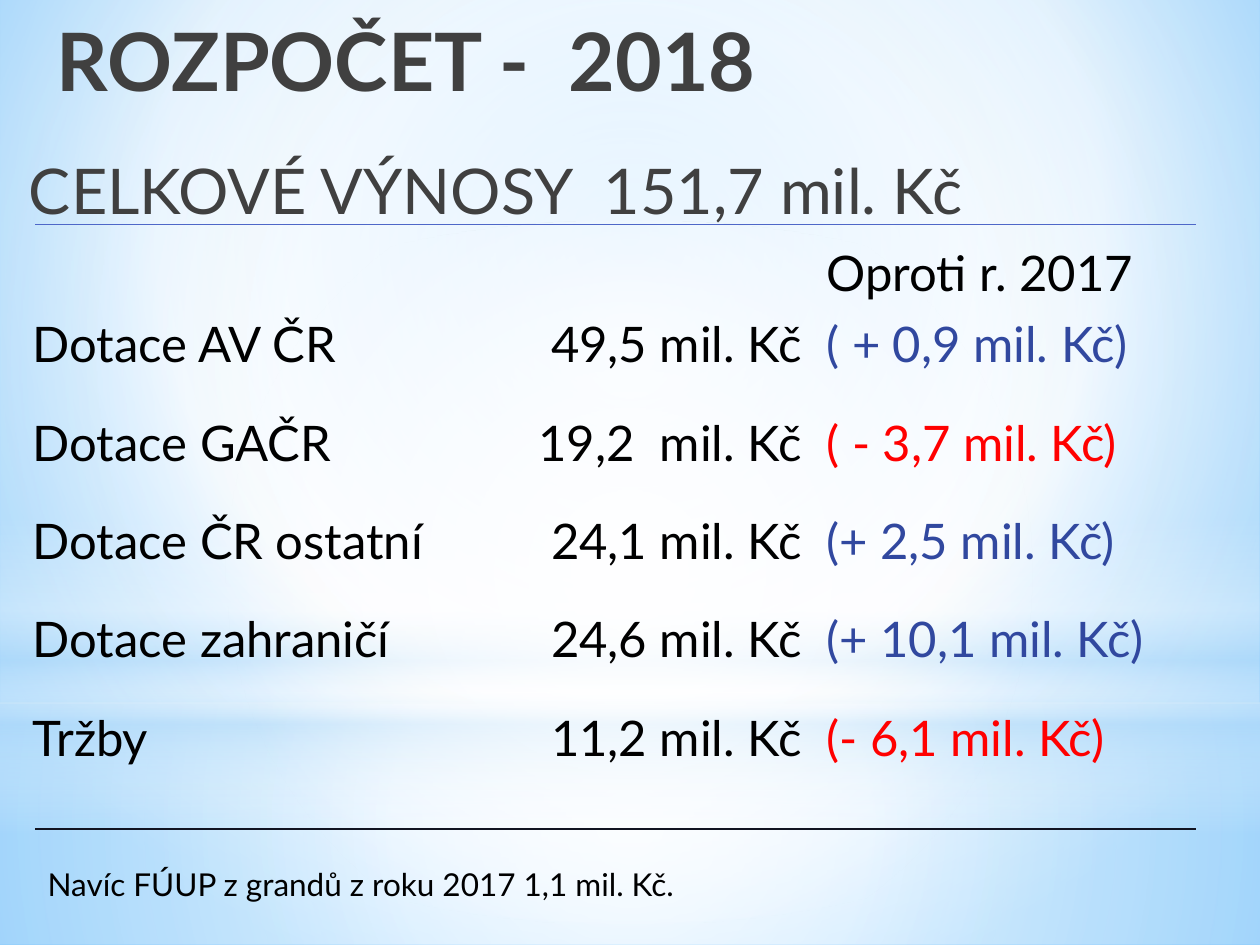
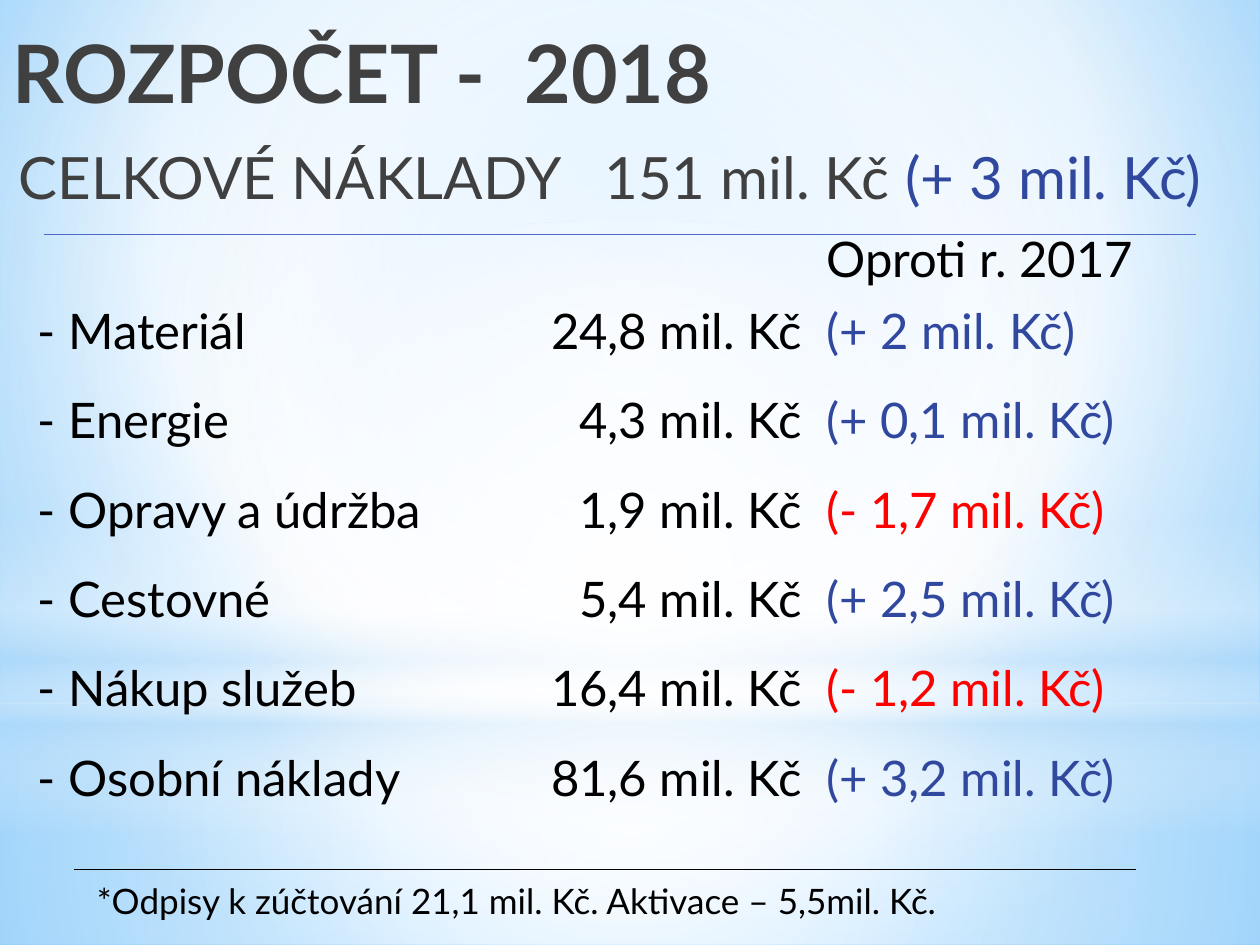
import pptx
import pptx.dml.color
import pptx.enum.shapes
import pptx.enum.text
import pptx.oxml
import pptx.oxml.ns
import pptx.util

SHAPE = pptx.enum.shapes.MSO_SHAPE
ALIGN = pptx.enum.text.PP_ALIGN
FIT = pptx.enum.text.MSO_AUTO_SIZE
WIDTH, HEIGHT, HORIZON = 10, 7.5, 5.58

# Content; lengths in inches
HEADING = "ROZPOČET -  2018"
COMPARISON = "Oproti r. 2017"

BUDGETS = [
    {
        "total": [("CELKOVÉ VÝNOSY  151,7 mil. Kč", "soft")],
        "items": [
            ("Dotace AV ČR", "49,5 mil. Kč", "( + 0,9 mil. Kč)"),
            ("Dotace GAČR", "19,2  mil. Kč", "( - 3,7 mil. Kč)"),
            ("Dotace ČR ostatní", "24,1 mil. Kč", "(+ 2,5 mil. Kč)"),
            ("Dotace zahraničí", "24,6 mil. Kč", "(+ 10,1 mil. Kč)"),
            ("Tržby", "11,2 mil. Kč", "(- 6,1 mil. Kč)"),
        ],
        "note": "Navíc FÚUP z grandů z roku 2017 1,1 mil. Kč.",
        "heading_at": (0.35, 0.04, 9.65, 1.25),
        "total_at": (0.08, 1.15, 9.92, 0.79),
        "table_at": (0.16, 1.88),
        "note_at": (0.28, 6.82, 7.48, 0.4),
        "columns": (3.35, 2.95, 3.15),
        "rows": [0.54] + [0.78] * 5,
        "rules": [(0.28, 9.49, 1.78, "rule"), (0.28, 9.49, 6.58, "dark_rule")],
        "total_size": 36, "note_size": 18,
    },
    {
        "total": [("CELKOVÉ NÁKLADY   151 mil. Kč ", "soft"),
                  ("(+ 3 mil. Kč)", "rise")],
        "items": [
            ("- Materiál", "24,8 mil. Kč", "(+ 2 mil. Kč)"),
            ("- Energie", "4,3 mil. Kč", "(+ 0,1 mil. Kč)"),
            ("- Opravy a údržba", "1,9 mil. Kč", "(- 1,7 mil. Kč)"),
            ("- Cestovné", "5,4 mil. Kč", "(+ 2,5 mil. Kč)"),
            ("- Nákup služeb", "16,4 mil. Kč", "(- 1,2 mil. Kč)"),
            ("- Osobní náklady", "81,6 mil. Kč", "(+ 3,2 mil. Kč)"),
        ],
        "note": "*Odpisy k zúčtování 21,1 mil. Kč. Aktivace – 5,5mil. Kč.",
        "heading_at": (0, 0.13, 10, 1.02),
        "total_at": (0, 1.07, 9.8, 0.79),
        "table_at": (0.2, 1.77),
        "note_at": (0.67, 6.93, 8.11, 0.44),
        "columns": (3.35, 2.91, 3.19),
        "rows": [0.53] + [0.71] * 5 + [0.97],
        "rules": [(0.35, 9.49, 1.86, "rule"), (0.59, 9.02, 6.9, "ink")],
        "total_size": 33.3, "note_size": 20,
    },
]

# Theme: colours, type sizes, gradients of (position, colour, opacity)
THEME = {
    "font": "Lato",
    "heading_size": 46, "table_size": 28, "rule_width": 0.75,
    "ink": "000000", "soft": "404040", "rise": "31489F", "fall": "FF0000",
    "rule": "4E67C8", "dark_rule": "111422",
    "no_grid": "{2D5ABB26-0587-4C30-8999-92F81FD0307C}",
}
CENTRE = (50, 50, 50, 50)
HEADING_STOPS = [(0, "000000", 100), (40, "404040", 100), (100, "212745", 65)]
SKY_STOPS = [(0, "9ED5FF", 100), (60, "FFFFFF", 100), (100, "5BB9FF", 100)]
BACKDROP = [
    (SHAPE.RECTANGLE, (0, HORIZON, WIDTH, HEIGHT - HORIZON), CENTRE,
     [(0, "FFFFFF", 91), (37, "FFFFFF", 76), (100, "B4DCFA", 79)]),
    (SHAPE.RECTANGLE, (0, 0, WIDTH, HORIZON), CENTRE,
     [(0, "FFFFFF", 89), (48, "FFFFFF", 62), (100, "B4DCFA", 79)]),
    (SHAPE.RECTANGLE, (0, 4.12, WIDTH, 2.5), None,
     [(0, "FFFFFF", 0), (29, "FFFFFF", 30), (45, "B4DCFA", 40),
      (55, "FFFFFF", 26), (65, "B4DCFA", 60), (100, "FFFFFF", 0)]),
    (SHAPE.OVAL, (0, 1.75, WIDTH, HORIZON), CENTRE,
     [(0, "FFFFFF", 100), (56, "FFFFFF", 0)]),
]


def inches(lengths):
    return [pptx.util.Inches(length) for length in lengths]


def rgb(name):
    return pptx.dml.color.RGBColor.from_string(THEME[name])


def set_all(target, values):
    for attribute, value in values.items():
        setattr(target, attribute, value)


def put_gradient(fill, owner, stops, focus=None):
    """Fill owner with a circular gradient around focus, or a vertical one."""
    fill.solid()
    fill.fore_color.rgb = rgb("ink")
    colours = "".join(
        f'<a:gs pos="{place * 1000}"><a:srgbClr val="{colour}">'
        f'<a:alpha val="{opacity * 1000}"/></a:srgbClr></a:gs>'
        for place, colour, opacity in stops)
    if focus:
        sides = " ".join(f'{side}="{share * 1000}"'
                         for side, share in zip("ltrb", focus))
        course = f'<a:path path="circle"><a:fillToRect {sides}/></a:path>'
    else:
        course = '<a:lin ang="5400000" scaled="0"/>'
    gradient = pptx.oxml.parse_xml(
        f'<a:gradFill {pptx.oxml.ns.nsdecls("a")} rotWithShape="1">'
        f'<a:gsLst>{colours}</a:gsLst>{course}</a:gradFill>')
    solid = owner.xpath("./a:solidFill")[0]
    owner.replace(solid, gradient)


def write(paragraph, text, size, colour="ink", bold=False):
    run = paragraph.add_run()
    run.text = text
    set_all(run.font, {"name": THEME["font"], "size": pptx.util.Pt(size),
                       "bold": bold})
    run.font.color.rgb = rgb(colour)
    return run


def place(shape, box):
    set_all(shape, dict(zip(("left", "top", "width", "height"), inches(box))))


def prepare(shape, fit):
    set_all(shape.text_frame, {
        "word_wrap": True, "auto_size": fit,
        "vertical_anchor": pptx.enum.text.MSO_ANCHOR.TOP})
    return shape.text_frame.paragraphs[0]


def add_backdrop(master, slide):
    """Draw the sky bands once and hand them to the master."""
    put_gradient(master.background.fill, master.element.xpath(".//p:bgPr")[0],
                 SKY_STOPS, (20, 10, 20, 60))
    for order, (outline, box, focus, stops) in enumerate(BACKDROP):
        band = slide.shapes.add_shape(outline, *inches(box))
        band.shadow.inherit = False
        band.line.fill.background()
        put_gradient(band.fill, band.element.spPr, stops, focus)
        band.element.xpath(".//p:cNvPr")[0].set("id", str(20 + order))
        master.shapes.element.insert(2 + order, band.element)


def add_headings(slide, budget):
    heading, total = slide.shapes.title, slide.placeholders[1]
    place(heading, budget["heading_at"])
    place(total, budget["total_at"])

    line = prepare(heading, FIT.NONE)
    line.alignment = ALIGN.LEFT
    run = write(line, HEADING, THEME["heading_size"], bold=True)
    put_gradient(run.font.fill, run.font.fill and run.text and
                 line.runs[0].font.fill and line.font and
                 line.runs[0]._r.rPr, HEADING_STOPS)

    line = prepare(total, FIT.NONE)
    set_all(line, {"alignment": ALIGN.LEFT, "space_before": pptx.util.Pt(0),
                   "space_after": pptx.util.Pt(3)})
    properties = line._p.get_or_add_pPr()
    properties.set("marL", str(pptx.util.Inches(0.05)))
    properties.set("indent", "0")
    properties.append(pptx.oxml.parse_xml(
        f'<a:buNone {pptx.oxml.ns.nsdecls("a")}/>'))
    for text, colour in budget["total"]:
        write(line, text, budget["total_size"], colour)


def add_rules(slide, budget):
    for start, end, height, colour in budget["rules"]:
        rule = slide.shapes.add_connector(
            pptx.enum.shapes.MSO_CONNECTOR.STRAIGHT,
            *inches((start, height, end, height)))
        rule.line.color.rgb = rgb(colour)
        rule.line.width = pptx.util.Pt(THEME["rule_width"])
        rule.element.spPr.append(pptx.oxml.parse_xml(
            f'<a:effectLst {pptx.oxml.ns.nsdecls("a")}/>'))


def add_budget_table(slide, budget):
    lines = [("", "", COMPARISON)] + budget["items"]
    size = (sum(budget["columns"]), sum(budget["rows"]))
    frame = slide.shapes.add_table(len(lines), len(budget["columns"]),
                                   *inches(budget["table_at"] + size))
    table = frame.table
    set_all(table, {"first_row": False, "horz_banding": False})
    frame.element.xpath(".//a:tableStyleId")[0].text = THEME["no_grid"]
    for column, width in zip(table.columns, inches(budget["columns"])):
        column.width = width
    for row, height in zip(table.rows, inches(budget["rows"])):
        row.height = height

    for row, texts in enumerate(lines):
        for column, text in enumerate(texts):
            cell = table.cell(row, column)
            cell.fill.background()
            if not text:
                continue
            colour = "ink"
            if row and column == 2:
                colour = "fall" if "-" in text else "rise"
            entry = cell.text_frame.paragraphs[0]
            entry.alignment = ALIGN.RIGHT if column == 1 else ALIGN.LEFT
            write(entry, text, THEME["table_size"], colour)


def add_note(slide, budget):
    note = slide.shapes.add_textbox(*inches(budget["note_at"]))
    write(prepare(note, FIT.SHAPE_TO_FIT_TEXT), budget["note"],
          budget["note_size"])


def main():
    deck = pptx.Presentation()
    deck.slide_width, deck.slide_height = inches((WIDTH, HEIGHT))
    for number, budget in enumerate(BUDGETS):
        slide = deck.slides.add_slide(deck.slide_layouts[1])
        if number == 0:
            add_backdrop(deck.slide_master, slide)
        add_headings(slide, budget)
        add_rules(slide, budget)
        add_budget_table(slide, budget)
        add_note(slide, budget)
    deck.save("out.pptx")


if __name__ == "__main__":
    main()
